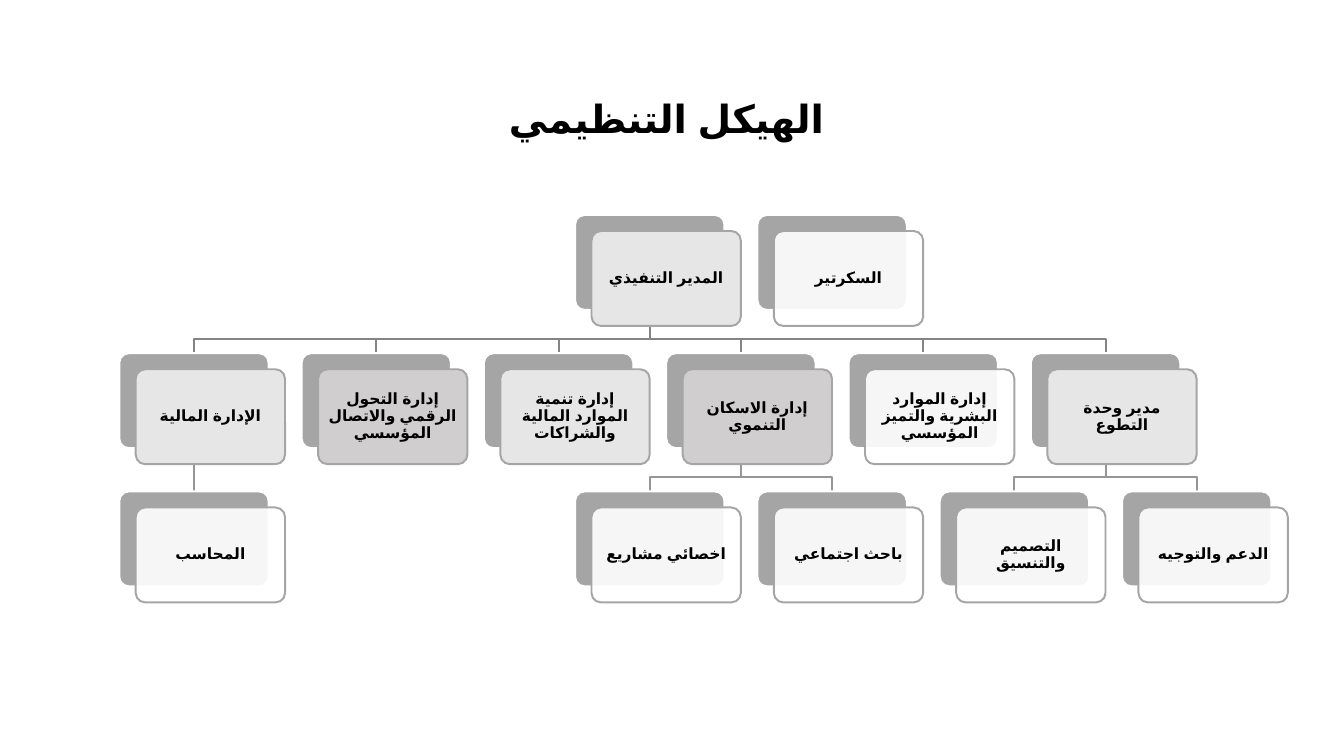
"""Build the organisation chart slide."""
from lxml.etree import SubElement
from pptx import Presentation
from pptx.dml.color import RGBColor
from pptx.enum.lang import MSO_LANGUAGE_ID
from pptx.enum.shapes import MSO_CONNECTOR, MSO_SHAPE
from pptx.enum.text import MSO_ANCHOR, MSO_AUTO_SIZE, PP_ALIGN
from pptx.oxml.ns import qn
from pptx.util import Inches, Pt

BLACK = RGBColor(0x00, 0x00, 0x00)
WHITE = RGBColor(0xFF, 0xFF, 0xFF)
GREY = RGBColor(0xA5, 0xA5, 0xA5)
LIGHT = RGBColor(0xE7, 0xE6, 0xE6)
MID = RGBColor(0xD0, 0xCE, 0xCE)
LINES = {1: RGBColor(0x84, 0x84, 0x84), 2: RGBColor(0x96, 0x96, 0x96)}

LEFT, TOP = 1.71, 3.08
STEP, RISE = 14.37 / 5.5, 1.98
WIDE, HIGH = 2.14, 1.36
SHIFT, DROP = 0.235, 0.23

UNITS = [
    ("المدير التنفيذي", 2.5, 0, LIGHT, None),
    ("السكرتير", 3.5, 0, WHITE, None),
    ("الإدارة المالية", 0, 1, LIGHT, 2.5),
    ("إدارة التحول الرقمي والاتصال المؤسسي", 1, 1, MID, 2.5),
    ("إدارة تنمية الموارد المالية والشراكات", 2, 1, LIGHT, 2.5),
    ("إدارة الاسكان التنموي", 3, 1, MID, 2.5),
    ("إدارة الموارد البشرية والتميز المؤسسي", 4, 1, WHITE, 2.5),
    ("مدير وحدة التطوع", 5, 1, LIGHT, 2.5),
    ("المحاسب", 0, 2, WHITE, 0),
    ("اخصائي مشاريع", 2.5, 2, WHITE, 3),
    ("باحث اجتماعي", 3.5, 2, WHITE, 3),
    ("التصميم والتنسيق", 4.5, 2, WHITE, 5),
    ("الدعم والتوجيه", 5.5, 2, WHITE, 5),
]


def write(frame, text, size, anchor, rtl=False, space=1.0):
    frame.word_wrap = True
    frame.vertical_anchor = anchor
    para = frame.paragraphs[0]
    para.alignment = PP_ALIGN.CENTER
    para.line_spacing = space
    if rtl:
        para._p.get_or_add_pPr().set("rtl", "1")
    run = para.add_run()
    run.text = text
    run.font.name = "Calibri"
    run.font.language_id = MSO_LANGUAGE_ID.ARABIC
    run.font.size = Pt(size)
    run.font.bold = True
    run.font.color.rgb = BLACK


def card(left, top, fill, edge):
    shape = shapes.add_shape(MSO_SHAPE.ROUNDED_RECTANGLE, Inches(left),
                             Inches(top), Inches(WIDE), Inches(HIGH))
    shape.adjustments[0] = 0.1
    shape.shadow.inherit = False
    shape.fill.solid()
    shape.fill.fore_color.rgb = fill
    shape.line.color.rgb = edge
    shape.line.width = Pt(2)
    return shape


deck = Presentation()
deck.slide_width, deck.slide_height = Inches(19.26), Inches(10.83)
slide = deck.slides.add_slide(deck.slide_layouts[5])
shapes = slide.shapes

title = shapes.title
title.left, title.top = Inches(5.88), Inches(1.3)
title.width, title.height = Inches(7.5), Inches(0.77)
write(title.text_frame, "الهيكل التنظيمي ", size=40, anchor=MSO_ANCHOR.TOP)
title.text_frame.auto_size = MSO_AUTO_SIZE.SHAPE_TO_FIT_TEXT

for name, col, row, fill, boss in UNITS:
    if boss is None:
        continue
    start, end = [Inches(LEFT + WIDE / 2 + STEP * c) for c in (boss, col)]
    foot = TOP + RISE * (row - 1) + HIGH
    high, bend, low = Inches(foot), Inches(foot + 0.42), Inches(foot + 0.62)
    if boss == col:
        link = shapes.add_connector(MSO_CONNECTOR.STRAIGHT, start, high, end, low)
        SubElement(link._element.spPr, qn("a:effectLst"))
    else:
        draft = shapes.build_freeform(start, high)
        draft.add_line_segments([(start, bend), (end, bend), (end, low)], close=False)
        link = draft.convert_to_shape()
        link.shadow.inherit = False
        link.fill.background()
    link.line.color.rgb = LINES[row]
    link.line.width = Pt(2)

for name, col, row, fill, boss in UNITS:
    left, top = LEFT + STEP * col, TOP + RISE * row
    card(left, top, GREY, WHITE)
    front = card(left + SHIFT, top + DROP, fill, GREY)
    if fill == WHITE:
        tint = front.fill._xPr.find(qn("a:solidFill"))[0]
        SubElement(tint, qn("a:alpha"), val="90000")
    frame = front.text_frame
    frame.margin_left = frame.margin_right = Inches(0.07)
    frame.margin_top = frame.margin_bottom = Inches(0.07)
    write(frame, name, size=16, anchor=MSO_ANCHOR.MIDDLE, rtl=True, space=0.9)

deck.save("out.pptx")
